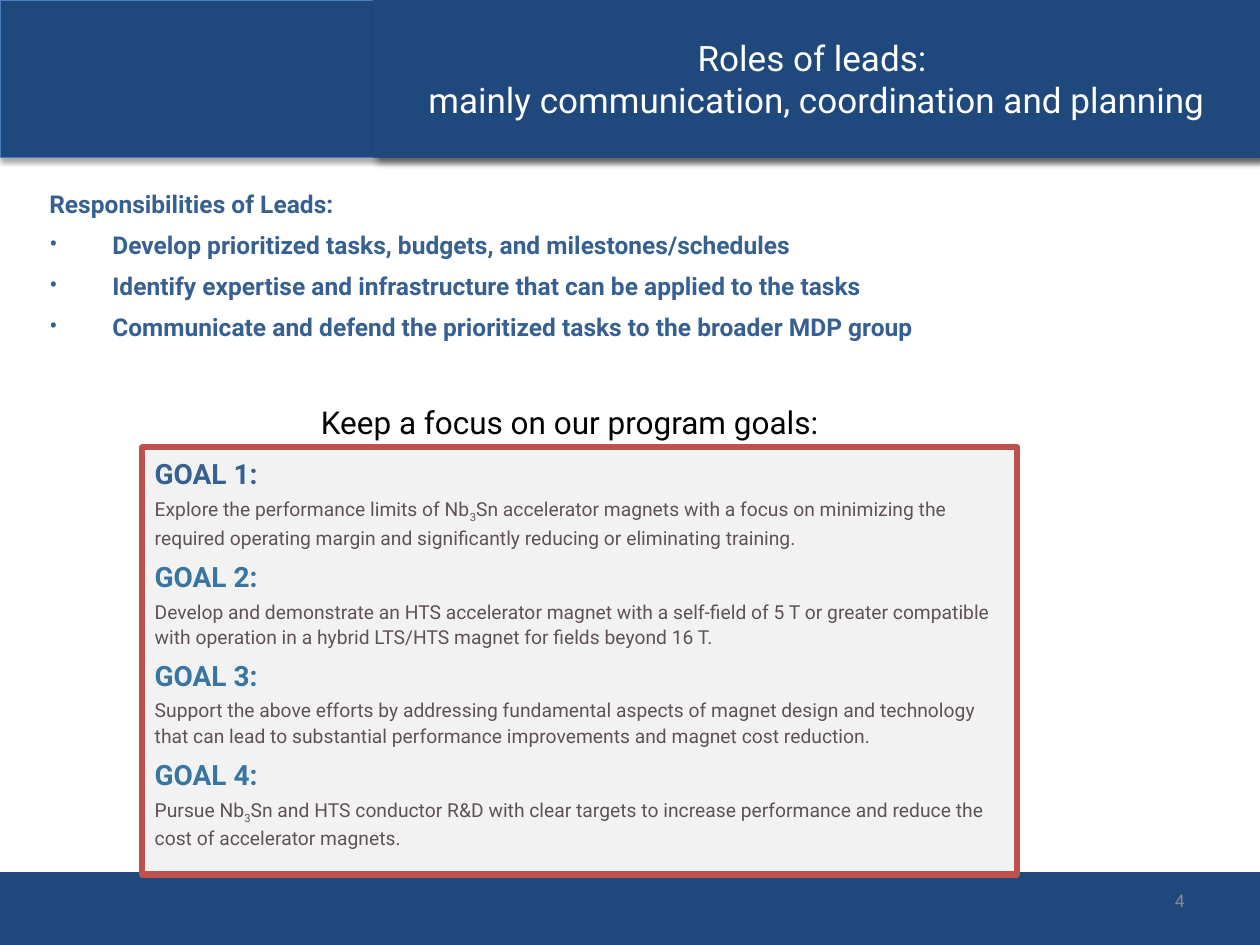
from lxml.etree import SubElement
from pptx import Presentation
from pptx.dml.color import RGBColor
from pptx.enum.shapes import MSO_SHAPE
from pptx.enum.text import MSO_ANCHOR as ANCHOR, MSO_AUTO_SIZE as AUTO, PP_ALIGN as ALIGN
from pptx.oxml.ns import qn
from pptx.util import Cm, Pt

NAVY = RGBColor(0x1F, 0x49, 0x7D)
EDGE = RGBColor(0x4B, 0x7E, 0xBC)
BLUE = RGBColor(0x37, 0x60, 0x92)
TEAL = RGBColor(0x39, 0x75, 0xA2)
TEXT = RGBColor(0x5E, 0x51, 0x59)
GREY = RGBColor(0x89, 0x89, 0x89)
PALE = RGBColor(0xF2, 0xF2, 0xF2)
RED = RGBColor(0xC0, 0x50, 0x4D)
WHITE = RGBColor(0xFF, 0xFF, 0xFF)
BLACK = RGBColor(0, 0, 0)
FONT = "Roboto"

TITLE = "Roles of leads: \vmainly communication, coordination and planning"
DUTIES = [
    "Develop prioritized tasks, budgets, and milestones/schedules",
    "Identify expertise and infrastructure that can be applied to the tasks",
    "Communicate and defend the prioritized tasks to the broader MDP group",
]
# Each goal is a list of text parts; every second part is a subscript.
GOALS = [
    ["Explore the performance limits of Nb", "3",
     "Sn accelerator magnets with a focus on minimizing the required operating "
     "margin and significantly reducing or eliminating training."],
    ["Develop and demonstrate an HTS accelerator magnet with a self-field of 5 T or "
     "greater compatible with operation in a hybrid LTS/HTS magnet for fields beyond 16 T."],
    ["Support the above efforts by addressing fundamental aspects of magnet design and "
     "technology that can lead to substantial performance improvements and magnet cost "
     "reduction."],
    ["Pursue Nb", "3",
     "Sn and HTS conductor R&D with clear targets to increase performance and reduce "
     "the cost of accelerator magnets."],
]


def place(sp, left, top, width, height):
    box = {"left": left, "top": top, "width": width, "height": height}
    for name, value in box.items():
        setattr(sp, name, Cm(value))


def paint(sp, fill, line=None, weight=0):
    sp.shadow.inherit = False
    sp.fill.solid()
    sp.fill.fore_color.rgb = fill
    if line is None:
        sp.line.fill.background()
    else:
        sp.line.color.rgb = line
        sp.line.width = Pt(weight)


def add_shadow(sp, alpha, blur, dist, angle):
    """Cast a black shadow; alpha in percent, lengths in points."""
    effects = sp._element.spPr.find(qn("a:effectLst"))
    shadow = SubElement(effects, qn("a:outerShdw"), blurRad=str(Pt(blur)),
                        dist=str(Pt(dist)), dir=str(angle * 60000),
                        algn="ctr", rotWithShape="0")
    color = SubElement(shadow, qn("a:srgbClr"), val="000000")
    SubElement(color, qn("a:alpha"), val=str(alpha * 1000))


def add_box(s, box, *paint_args):
    sp = s.shapes.add_shape(MSO_SHAPE.RECTANGLE, *map(Cm, box))
    paint(sp, *paint_args)
    return sp


def send_to_back(sp):
    sp._element.getparent().insert(2, sp._element)


def style_font(font, size, color, bold=False):
    for name, value in {"name": FONT, "size": Pt(size), "bold": bold}.items():
        setattr(font, name, value)
    font.color.rgb = color


def add_paragraph(tf, parts, size, color, bold=False, spacing=1.0, align=ALIGN.LEFT):
    """Add a paragraph whose odd-numbered parts are subscripts."""
    first = not tf.paragraphs[0].runs
    p = tf.paragraphs[0] if first else tf.add_paragraph()
    layout = {"alignment": align, "line_spacing": spacing,
              "space_before": Pt(0 if first else round(size * 0.235, 1))}
    for name, value in layout.items():
        setattr(p, name, value)
    for i, part in enumerate(parts):
        r = p.add_run()
        r.text = part
        style_font(r.font, size, color, bold)
        if i % 2:
            r.font._element.set("baseline", "-25000")
    return p


def set_bullet(p, char=None):
    pPr = p._p.get_or_add_pPr()
    indent = Cm(1.27) if char else 0
    pPr.set("marL", str(indent))
    pPr.set("indent", str(-indent))
    if char:
        SubElement(pPr, qn("a:buFont"), typeface=FONT)
        SubElement(pPr, qn("a:buChar"), char=char)
    else:
        SubElement(pPr, qn("a:buNone"))


def add_label(s, box, text, size, color, align=ALIGN.LEFT, anchor=ANCHOR.TOP):
    tf = s.shapes.add_textbox(*map(Cm, box)).text_frame
    tf.word_wrap = True
    tf.vertical_anchor = anchor
    add_paragraph(tf, [text], size, color, align=align)


def add_bars(s):
    send_to_back(add_box(s, (0, 0, 25.4, 3.18), NAVY, EDGE, 0.75))
    add_shadow(s.shapes[0], 35, 3.1, 1.8, 90)
    send_to_back(add_box(s, (0, 17.58, 25.4, 1.47), NAVY))


def fill_title(sp):
    place(sp, 7.52, 0, 17.88, 3.18)
    paint(sp, NAVY)
    add_shadow(sp, 43, 4, 3, 45)
    tf = sp.text_frame
    tf.auto_size = AUTO.NONE
    tf.vertical_anchor = ANCHOR.MIDDLE
    tf.text = TITLE
    p = tf.paragraphs[0]
    p.alignment = ALIGN.CENTER
    for r in p.runs:
        style_font(r.font, 20, WHITE)


def fill_body(sp):
    place(sp, 0.74, 3.56, 24.36, 11.2)
    tf = sp.text_frame
    tf.auto_size = AUTO.NONE
    set_bullet(add_paragraph(tf, ["Responsibilities of Leads:"], 14, BLUE, True, 1.2))
    for duty in DUTIES:
        set_bullet(add_paragraph(tf, [duty], 14, BLUE, True, 1.2), "•")


def add_goals(s):
    sp = add_box(s, (2.87, 9.02, 17.63, 8.61), PALE, RED, 3.5)
    tf = sp.text_frame
    tf.word_wrap = True
    tf.vertical_anchor = ANCHOR.TOP
    for number, parts in enumerate(GOALS, 1):
        color = BLUE if number == 1 else TEAL
        add_paragraph(tf, [f"GOAL {number}:"], 16, color, True, 1.1)
        add_paragraph(tf, parts, 11, TEXT, spacing=1.1)


def main():
    prs = Presentation()
    prs.slide_width, prs.slide_height = Cm(25.4), Cm(19.05)
    s = prs.slides.add_slide(prs.slide_layouts[1])
    fill_title(s.shapes.title)
    fill_body(s.placeholders[1])
    add_bars(s)
    add_label(s, (22.68, 17.65, 1.45, 1.02), "4", 10, GREY, ALIGN.RIGHT, ANCHOR.MIDDLE)
    add_goals(s)
    add_label(s, (6.22, 8, 11.18, 1.02), "Keep a focus on our program goals:", 18, BLACK)
    prs.save("out.pptx")


if __name__ == "__main__":
    main()
